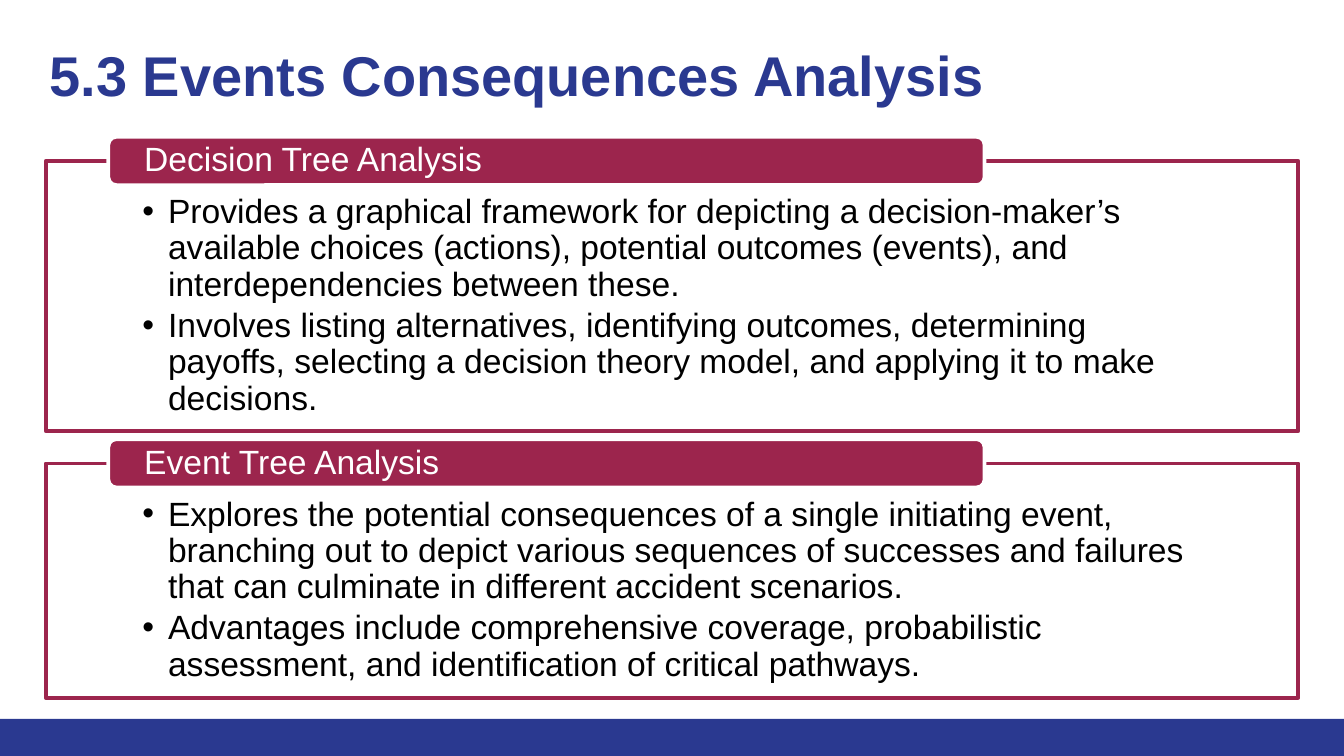
import pptx
import pptx.util
import pptx.dml.color
import pptx.enum.shapes
import pptx.enum.text
import pptx.oxml
import pptx.oxml.ns

Inches, Pt = pptx.util.Inches, pptx.util.Pt
RGB = pptx.dml.color.RGBColor.from_string
SHAPE = pptx.enum.shapes.MSO_SHAPE
ANCHOR = pptx.enum.text.MSO_ANCHOR
ALIGN = pptx.enum.text.PP_ALIGN

THEME = {
    "font": "Arial", "title": Pt(30), "body": Pt(18), "line": Pt(2),
    "blue": "2A3990", "wine": "9C254D", "white": "FFFFFF", "black": "000000",
}
INDENT = Inches(0.19)

# Widescreen 16:9 slide
prs = pptx.Presentation()
prs.slide_width = Inches(10)
prs.slide_height = prs.slide_width * 9 // 16
s = prs.slides.add_slide(prs.slide_layouts[6])

# Grid: 100 columns by 100 rows
COL, ROW = prs.slide_width / 100, prs.slide_height / 100


def add_block(kind, x, y, w, h, fill, line=None):
    sp = s.shapes.add_shape(kind, *map(round, (x * COL, y * ROW, w * COL, h * ROW)))
    sp.shadow.inherit = False
    sp.fill.solid()
    sp.fill.fore_color.rgb = RGB(THEME[fill])
    if line:
        sp.line.color.rgb = RGB(THEME[line])
        sp.line.width = THEME["line"]
    else:
        sp.line.fill.background()
    return sp


def write(sp, texts, insets, anchor, size, color, bold=False, bullet=False, para=None):
    tf = sp.text_frame
    left, top, right, bottom = map(Inches, insets)
    frame = {"word_wrap": True, "vertical_anchor": anchor, "margin_left": left,
             "margin_top": top, "margin_right": right, "margin_bottom": bottom}
    for name, value in frame.items():
        setattr(tf, name, value)
    for i, text in enumerate(texts):
        p = tf.add_paragraph() if i else tf.paragraphs[0]
        for name, value in {"alignment": ALIGN.LEFT, **(para or {})}.items():
            setattr(p, name, value)
        if bullet:
            pPr = p._p.get_or_add_pPr()
            pPr.set("marL", str(INDENT))
            pPr.set("indent", str(-INDENT))
            ns = pptx.oxml.ns.nsdecls("a")
            for tag in (f'buFont {ns} typeface="{THEME["font"]}"', f'buChar {ns} char="•"'):
                pPr.append(pptx.oxml.parse_xml(f"<a:{tag}/>"))
        r = p.add_run()
        r.text = text
        for name, value in {"name": THEME["font"], "size": THEME[size], "bold": bold}.items():
            setattr(r.font, name, value)
        r.font.color.rgb = RGB(THEME[color])


# Footer band
add_block(SHAPE.RECTANGLE, 0, 95.1, 100, 4.9, "blue")

# Framed sections, each with a header tab centred on its top edge
SECTIONS = [
    ("Decision Tree Analysis", 35.75, [
        "Provides a graphical framework for depicting a decision-maker’s available choices "
        "(actions), potential outcomes (events), and interdependencies between these.",
        "Involves listing alternatives, identifying outcomes, determining payoffs, selecting "
        "a decision theory model, and applying it to make decisions.",
    ]),
    ("Event Tree Analysis", 31, [
        "Explores the potential consequences of a single initiating event, branching out to "
        "depict various sequences of successes and failures that can culminate in different "
        "accident scenarios.",
        "Advantages include comprehensive coverage, probabilistic assessment, and "
        "identification of critical pathways.",
    ]),
]
TAB_H, GAP = 6.4, 4.25
y = 21.3
for heading, height, points in SECTIONS:
    sp = add_block(SHAPE.RECTANGLE, 3.4, y, 93.2, height, "white", "wine")
    write(sp, points, (0.72, 0.25, 0.72, 0.14), ANCHOR.TOP, "body", "black", bullet=True,
          para={"level": 1, "line_spacing": 0.9, "space_after": Pt(2.7)})
    sp = add_block(SHAPE.ROUNDED_RECTANGLE, 8.06, y - TAB_H / 2, 65.2, TAB_H, "wine", "white")
    write(sp, [heading], (0.25, 0, 0.25, 0), ANCHOR.MIDDLE, "body", "white",
          para={"line_spacing": 0.9})
    y += height + GAP

# Title
sp = s.shapes.add_textbox(*map(round, (2.7 * COL, 3.6 * ROW, 92 * COL, 15.8 * ROW)))
write(sp, ["5.3 Events Consequences Analysis"], (0.1, 0.1, 0.1, 0.1), ANCHOR.TOP,
      "title", "blue", bold=True)

prs.save("out.pptx")
